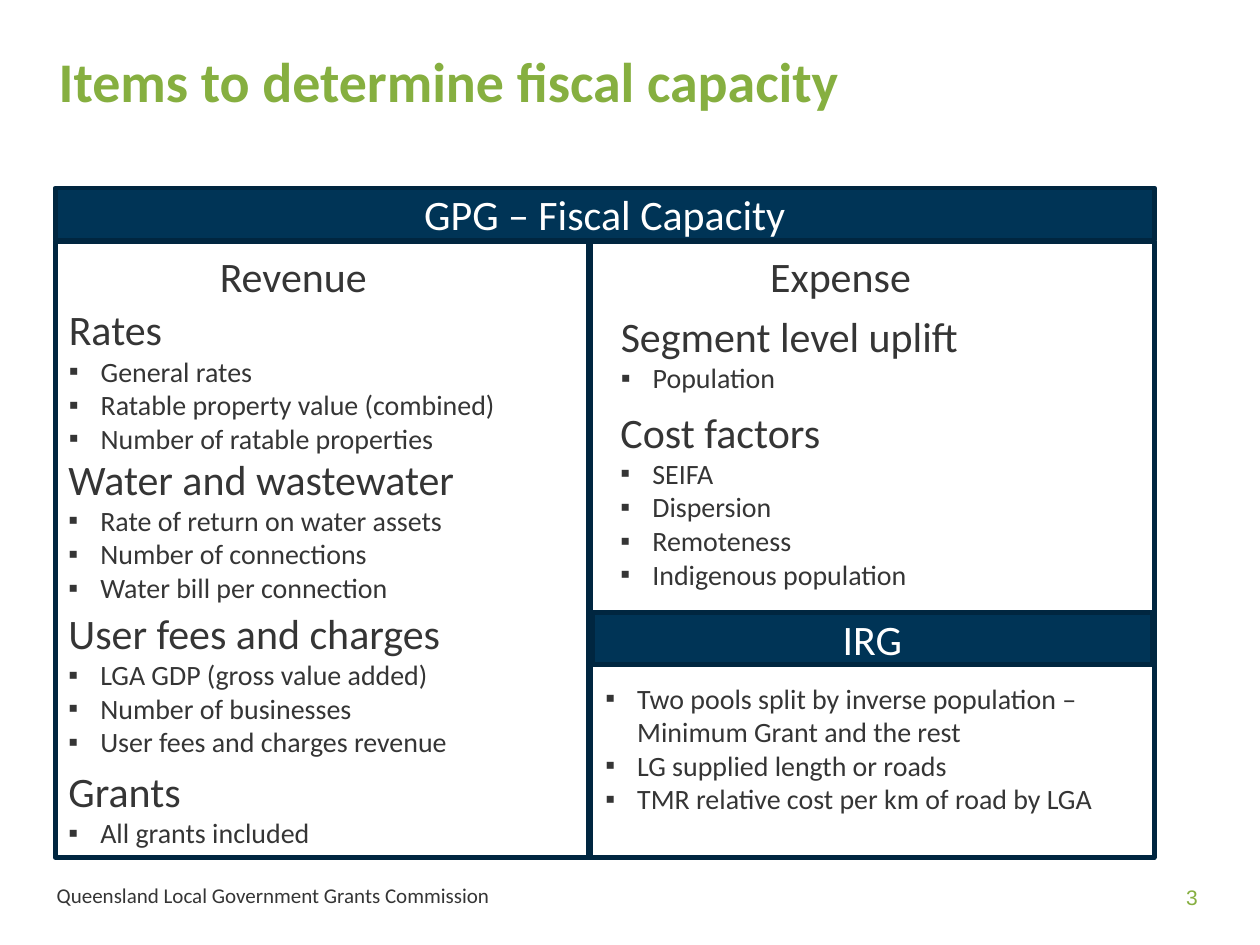
from lxml import etree
from pptx import Presentation
from pptx.dml.color import RGBColor
from pptx.enum.shapes import MSO_SHAPE as Shape
from pptx.enum.text import MSO_ANCHOR as Anchor, MSO_AUTO_SIZE as AutoSize, PP_ALIGN as Align
from pptx.oxml.ns import qn
from pptx.util import Inches, Pt

GREEN = RGBColor(0x86, 0xAF, 0x40)
NAVY = RGBColor(0x00, 0x34, 0x56)
OUTLINE = RGBColor(0x00, 0x26, 0x40)
DARK = RGBColor(0x35, 0x35, 0x35)
WHITE = RGBColor(0xFF, 0xFF, 0xFF)

COMPARISON_LAYOUT = 4
COLUMN_TOP, COLUMN_HEIGHT = 1.44, 3.67
BULLET_INDENT = Inches(0.19)

LEFT_LISTS = [
    (1.76, 1.01, "Rates",
     ["General rates", "Ratable property value (combined)", "Number of ratable properties"]),
    (2.65, 1.01, "Water and wastewater",
     ["Rate of return on water assets", "Number of connections", "Water bill per connection"]),
    (3.57, 1.01, "User fees and charges",
     ["LGA GDP (gross value added)", "Number of businesses", "User fees and charges revenue"]),
    (4.51, 0.61, "Grants", ["All grants included"]),
]
RIGHT_LISTS = [
    (1.8, 0.61, "Segment level uplift", ["Population"]),
    (2.37, 1.21, "Cost factors",
     ["SEIFA", "Dispersion", "Remoteness", "Indigenous population"]),
]
IRG_ITEMS = [
    "Two pools split by inverse population – Minimum Grant and the rest",
    "LG supplied length or roads",
    "TMR relative cost per km of road by LGA",
]


def place(box, left, top, width, height):
    box.left, box.top = Inches(left), Inches(top)
    box.width, box.height = Inches(width), Inches(height)


def prepare_frame(box, anchor=Anchor.TOP, inset=None):
    frame = box.text_frame
    frame.word_wrap = True
    frame.auto_size = AutoSize.NONE
    frame.vertical_anchor = anchor
    if inset is not None:
        frame.margin_left = frame.margin_right = Inches(inset)
        frame.margin_top = frame.margin_bottom = Inches(inset)
    return frame


def set_bullet(para, bulleted):
    properties = para._p.get_or_add_pPr()
    properties.set("marL", str(BULLET_INDENT if bulleted else 0))
    properties.set("indent", str(-BULLET_INDENT if bulleted else 0))
    if bulleted:
        etree.SubElement(properties, qn("a:buFont"), typeface="Arial")
        etree.SubElement(properties, qn("a:buChar"), char="▪")
    else:
        etree.SubElement(properties, qn("a:buNone"))


def write(para, text, size, color=DARK, align=Align.LEFT, bold=False,
          bulleted=False, face="Calibri"):
    para.text = text
    set_bullet(para, bulleted)
    para.alignment = align
    para.space_before = para.space_after = Pt(0)
    font = para.font
    font.name, font.size, font.bold = face, Pt(size), bold
    font.color.rgb = color


def add_line(page, text, bounds, size, box=None, anchor=Anchor.TOP, inset=None, **style):
    """One line of text, in the given placeholder or a new text box."""
    box = box or page.shapes.add_textbox(0, 0, 0, 0)
    place(box, *bounds)
    write(prepare_frame(box, anchor, inset).paragraphs[0], text, size, **style)


def add_list(page, heading, items, bounds, box=None):
    """Bulleted items under an optional heading."""
    box = box or page.shapes.add_textbox(0, 0, 0, 0)
    place(box, *bounds)
    frame = prepare_frame(box)
    lines = [(heading, 18, False)] if heading else []
    lines += [(item, 12, True) for item in items]
    for index, (text, size, bulleted) in enumerate(lines):
        para = frame.add_paragraph() if index else frame.paragraphs[0]
        write(para, text, size, bulleted=bulleted)


def add_column(page, left, width, lists, first_box):
    for index, (top, height, heading, items) in enumerate(lists):
        add_list(page, heading, items, (left, top, width, height),
                 None if index else first_box)


def add_panel(page, left, top, width, height):
    panel = page.shapes.add_shape(Shape.RECTANGLE, Inches(left), Inches(top),
                                  Inches(width), Inches(height))
    panel.shadow.inherit = False
    panel.fill.background()
    panel.line.color.rgb = OUTLINE
    panel.line.width = Pt(2)
    return panel


def add_banner(page, text, *bounds):
    banner = add_panel(page, *bounds)
    banner.fill.solid()
    banner.fill.fore_color.rgb = NAVY
    frame = prepare_frame(banner, Anchor.MIDDLE)
    write(frame.paragraphs[0], text, 18, WHITE, Align.CENTER)


def main():
    deck = Presentation()
    deck.slide_width, deck.slide_height = Inches(7.51), Inches(5.63)
    page = deck.slides.add_slide(deck.slide_layouts[COMPARISON_LAYOUT])
    title, revenue, left_body, expense, right_body = page.placeholders

    # Title
    add_line(page, "Items to determine fiscal capacity", (0.35, 0.24, 6.79, 0.44), 24,
             box=title, anchor=Anchor.BOTTOM, inset=0, color=GREEN, bold=True)

    # Fiscal capacity columns
    add_banner(page, "GPG – Fiscal Capacity", 0.33, 1.12, 6.55, 0.31)
    add_line(page, "Revenue", (1.21, COLUMN_TOP, 1.43, 0.4), 18, box=revenue)
    add_line(page, "Expense", (4.49, COLUMN_TOP, 1.43, 0.4), 18, box=expense)
    add_column(page, 0.31, 2.84, LEFT_LISTS, left_body)
    add_column(page, 3.6, 3.27, RIGHT_LISTS, right_body)

    # IRG section
    add_banner(page, "IRG", 3.53, 3.65, 3.34, 0.31)
    add_list(page, None, IRG_ITEMS, (3.51, 4.01, 3.37, 1.1))

    # Column outlines
    for left, width in ((0.33, 3.19), (3.51, 3.37)):
        add_panel(page, left, COLUMN_TOP, width, COLUMN_HEIGHT)

    # Footer and page number
    add_line(page, "Queensland Local Government Grants Commission",
             (0.24, 5.21, 4.54, 0.25), 9)
    add_line(page, "3", (6.61, 5.09, 0.53, 0.33), 9, anchor=Anchor.BOTTOM, inset=0,
             color=GREEN, align=Align.RIGHT, face="Arial")

    deck.save("out.pptx")


if __name__ == "__main__":
    main()
